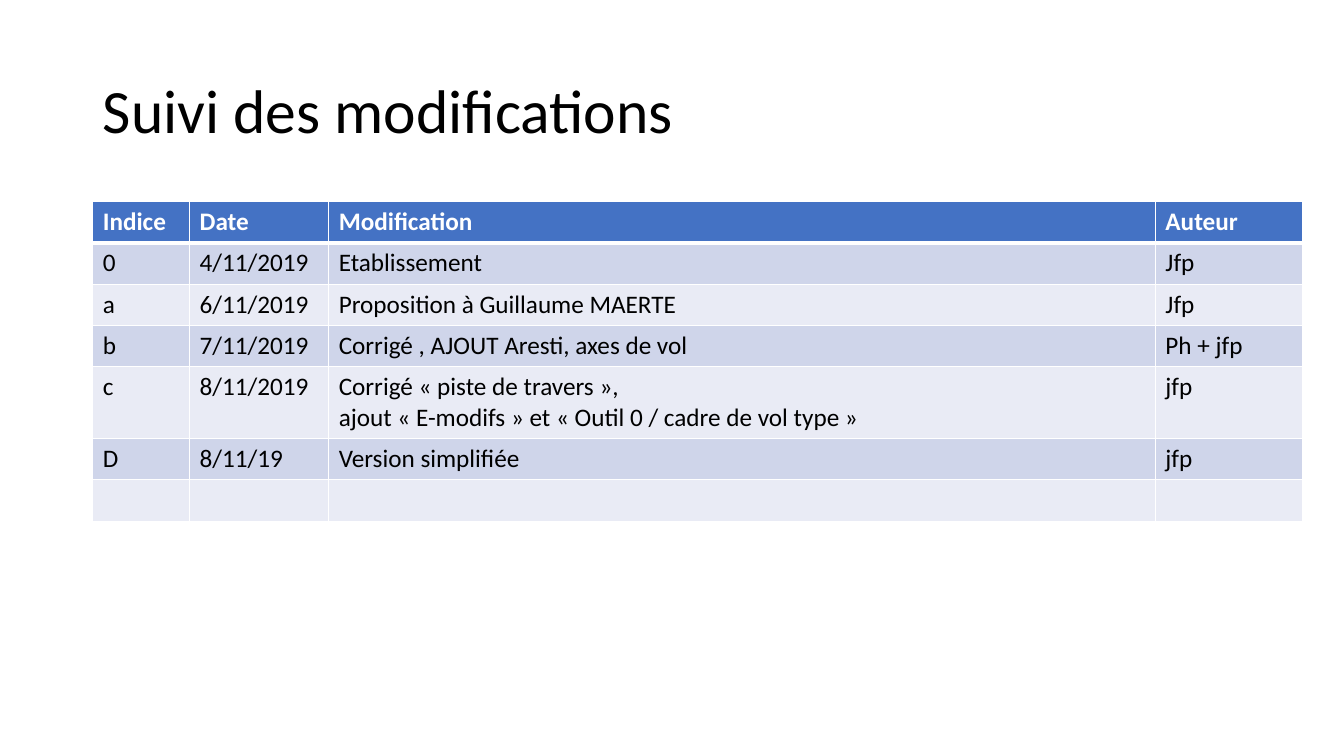
from lxml import etree
from pptx import Presentation
from pptx.dml.color import RGBColor
from pptx.enum.text import MSO_ANCHOR, PP_ALIGN
from pptx.oxml.ns import qn
from pptx.util import Inches, Pt

LEFT = PP_ALIGN.LEFT
MIDDLE = MSO_ANCHOR.MIDDLE
BLACK = RGBColor(0x00, 0x00, 0x00)
WHITE = RGBColor(0xFF, 0xFF, 0xFF)
BLUE = RGBColor(0x44, 0x72, 0xC4)
BANDS = [RGBColor(0xE9, 0xEB, 0xF5), RGBColor(0xCF, 0xD5, 0xEA)]

HEAD = {"name": "Calibri", "size": Pt(18), "bold": True}
BODY = {"name": "Calibri", "size": Pt(18), "bold": False}
TITLE = {"name": "Calibri", "size": Pt(44), "bold": False}

COLS = [0.96, 1.38, 8.2, 1.46]
ROW = 0.41
ROWS = [
    ["Indice", "Date", "Modification", "Auteur"],
    ["0", "4/11/2019", "Etablissement", "Jfp"],
    ["a", "6/11/2019", "Proposition à Guillaume MAERTE", "Jfp"],
    ["b", "7/11/2019", "Corrigé , AJOUT Aresti, axes de vol", "Ph + jfp"],
    ["c", "8/11/2019",
     "Corrigé « piste de travers »,\n"
     "ajout « E-modifs » et « Outil 0 / cadre de vol type »", "jfp"],
    ["D", "8/11/19", "Version simplifiée", "jfp"],
    ["", "", "", ""],
]


def style(font, look, color):
    for key, value in look.items():
        setattr(font, key, value)
    font.color.rgb = color


def border(cell, widths):
    props = cell._tc.get_or_add_tcPr()
    for side, width in widths.items():
        line = etree.SubElement(props, qn(f"a:ln{side}"), w=str(Pt(width)))
        fill = etree.SubElement(line, qn("a:solidFill"))
        etree.SubElement(fill, qn("a:srgbClr"), val=str(WHITE))


def add_title(slide, text, left, top, width, height):
    title = slide.shapes.title
    box = {"left": left, "top": top, "width": width, "height": height}
    for key, value in box.items():
        setattr(title, key, Inches(value))
    frame = title.text_frame
    frame.text = text
    frame.word_wrap = True
    frame.vertical_anchor = MIDDLE
    para = frame.paragraphs[0]
    para.alignment = LEFT
    para.line_spacing = 0.9
    style(para.runs[0].font, TITLE, BLACK)


def add_log(slide, left, top, width):
    table = slide.shapes.add_table(
        len(ROWS), len(COLS), Inches(left), Inches(top),
        Inches(width), Inches(ROW * len(ROWS))).table
    for col, part in zip(table.columns, COLS):
        col.width = Inches(width * part / sum(COLS))
    for i, row in enumerate(ROWS):
        table.rows[i].height = Inches(ROW)
        look, color, fill = (BODY, BLACK, BANDS[i % 2]) if i else (HEAD, WHITE, BLUE)
        widths = {"L": 1, "R": 1, "T": 3 if i == 1 else 1, "B": 1 if i else 3}
        for j, text in enumerate(row):
            cell = table.cell(i, j)
            cell.text = text
            border(cell, widths)
            cell.fill.solid()
            cell.fill.fore_color.rgb = fill
            for para in cell.text_frame.paragraphs:
                style(para.font, look, color)
                for run in para.runs:
                    style(run.font, look, color)


def main():
    deck = Presentation()
    deck.slide_width = Inches(13.33)
    deck.slide_height = Inches(7.5)
    slide = deck.slides.add_slide(deck.slide_layouts[5])
    add_title(slide, "Suivi des modifications", 0.92, 0.4, 11.5, 1.45)
    add_log(slide, 0.92, 2, 12)
    deck.save("out.pptx")


if __name__ == "__main__":
    main()
